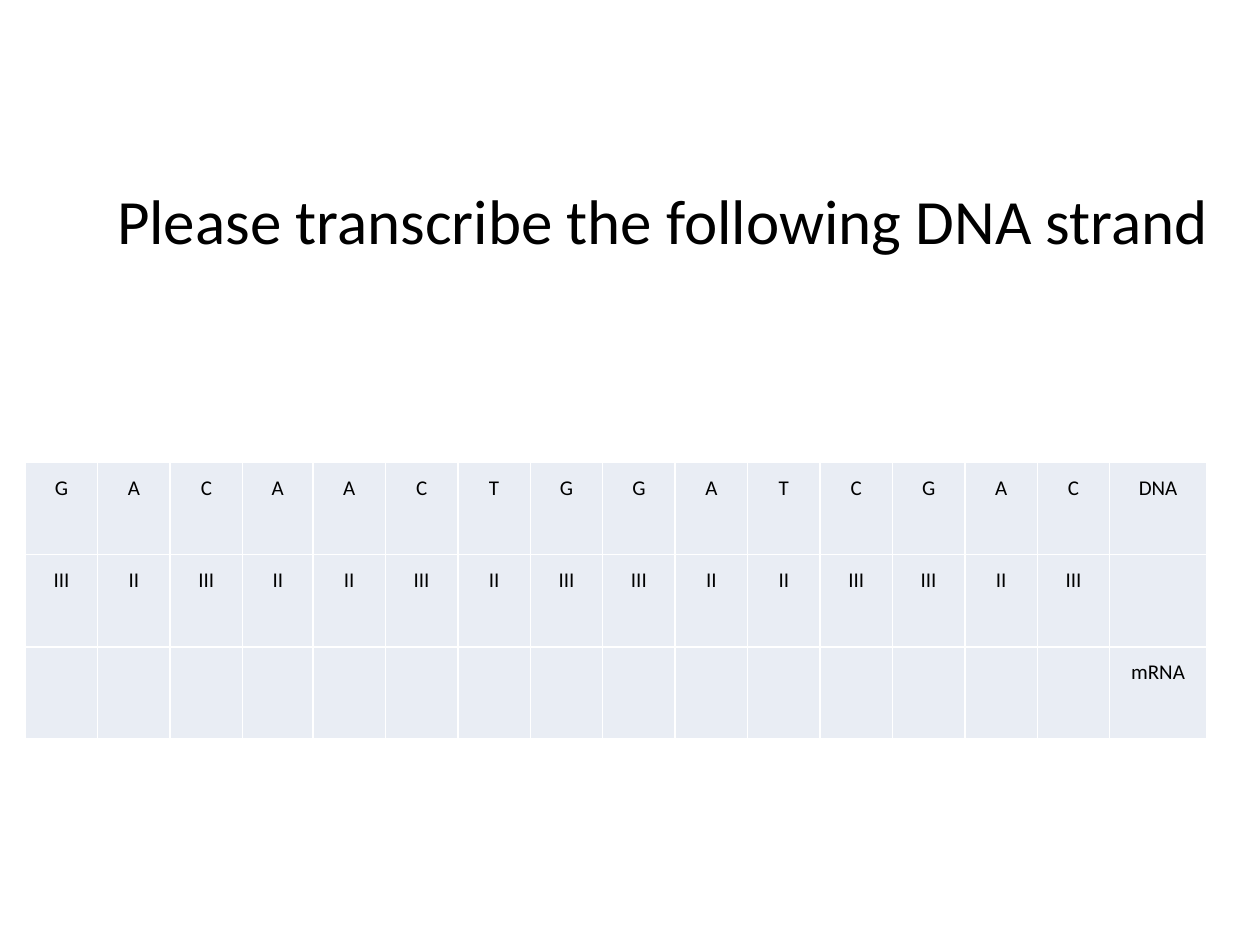
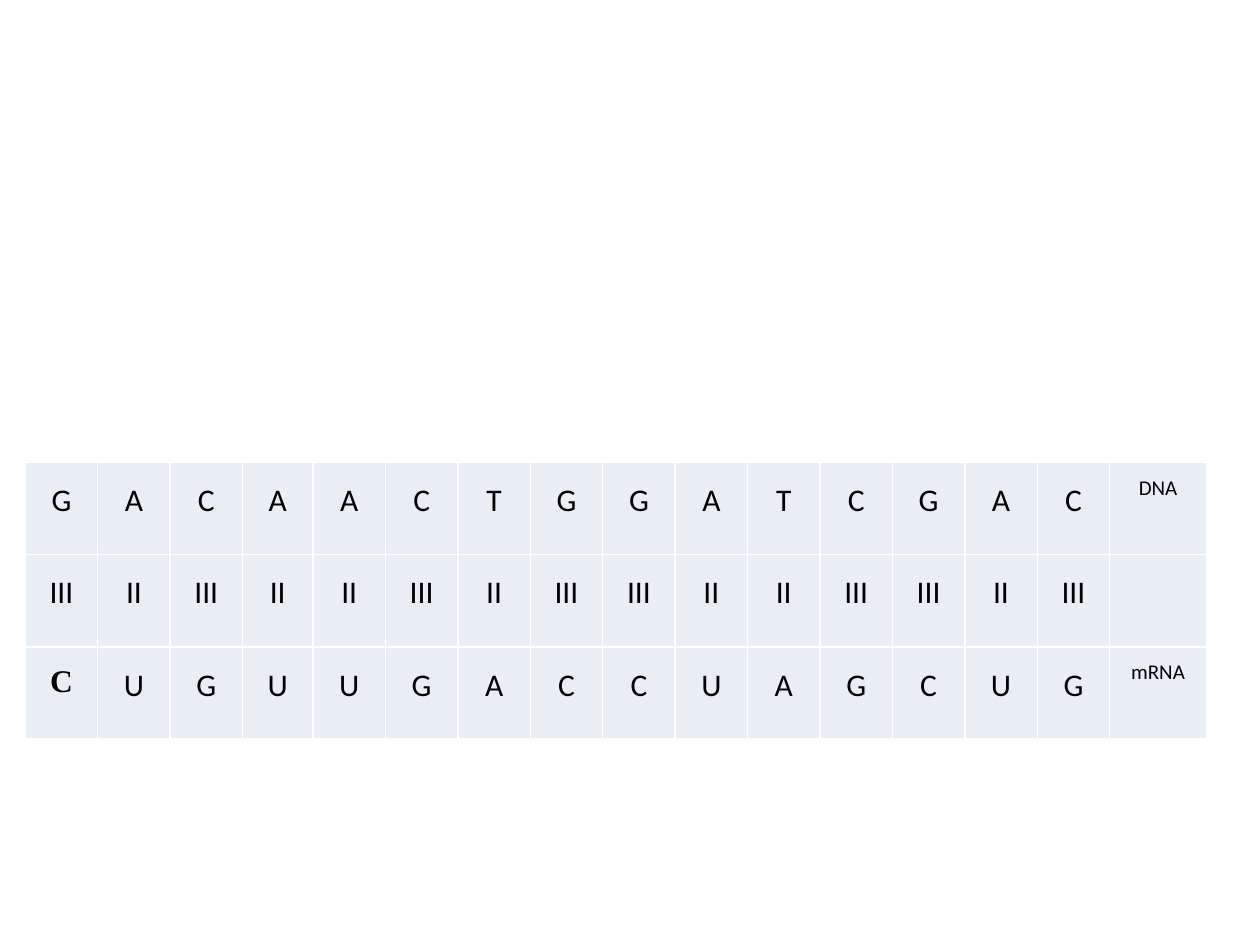
from lxml.etree import SubElement
from pptx import Presentation
from pptx.dml.color import RGBColor
from pptx.enum.text import MSO_AUTO_SIZE, PP_ALIGN
from pptx.oxml.ns import qn
from pptx.util import Cm, Pt

DNA = "GACAACTGGATCGAC"
MRNA_PAIRS = {"G": "C", "C": "G", "A": "U", "T": "A"}
BONDS = {"G": "III", "C": "III", "A": "II", "T": "II"}
COLUMN_WIDTHS = [1.46] * 3 + [1.42] + [1.46] * 11 + [1.95]
ROW_HEIGHT = 1.86


def color(hex_string):
    return RGBColor.from_string(hex_string)


class StrandDeck:
    font = "Calibri"
    text_color = "000000"
    cell_color = "E9EDF4"
    border_color = "FFFFFF"
    title_size = 36
    label_size = 12

    def __init__(self):
        self.presentation = Presentation()
        self.presentation.slide_width = Cm(25.4)
        self.presentation.slide_height = Cm(19.05)
        self.slide = None

    def add_slide(self):
        self.slide = self.presentation.slides.add_slide(self.presentation.slide_layouts[6])

    def format_runs(self, paragraph, size, font=None, bold=False):
        for run in paragraph.runs:
            run.font.name = font or self.font
            run.font.size = Pt(size)
            run.font.bold = bold
            run.font.color.rgb = color(self.text_color)

    def add_title(self, text):
        shape = self.slide.shapes.add_textbox(Cm(2.11), Cm(3.53), Cm(23.22), Cm(1.8))
        text_frame = shape.text_frame
        text_frame.word_wrap = False
        text_frame.auto_size = MSO_AUTO_SIZE.SHAPE_TO_FIT_TEXT
        text_frame.text = text
        self.format_runs(text_frame.paragraphs[0], self.title_size)

    def add_borders(self, cell):
        properties = cell._tc.get_or_add_tcPr()
        for side in ("a:lnL", "a:lnR", "a:lnT", "a:lnB"):
            line = SubElement(properties, qn(side), w=str(Pt(1)))
            fill = SubElement(line, qn("a:solidFill"))
            SubElement(fill, qn("a:srgbClr"), val=self.border_color)

    def fill_cell(self, cell, text, size):
        self.add_borders(cell)
        cell.fill.solid()
        cell.fill.fore_color.rgb = color(self.cell_color)
        cell.margin_left = cell.margin_right = Cm(0.18)
        cell.margin_top = cell.margin_bottom = 0
        paragraph = cell.text_frame.paragraphs[0]
        paragraph.text = text
        paragraph.alignment = PP_ALIGN.CENTER
        paragraph.line_spacing = 1.5
        indent = Cm(0.64)
        properties = paragraph._p.get_or_add_pPr()
        properties.set("marL", str(indent))
        properties.set("indent", str(-indent))
        self.format_runs(paragraph, size)

    def add_strand_table(self, mrna, base_size):
        rows = [
            [*DNA, "DNA"],
            [*(BONDS[base] for base in DNA), ""],
            [*mrna, "mRNA"],
        ]
        table = self.slide.shapes.add_table(
            len(rows), len(COLUMN_WIDTHS), Cm(0.51), Cm(9.32),
            Cm(sum(COLUMN_WIDTHS)), Cm(ROW_HEIGHT * len(rows)),
        ).table
        table.first_row = table.horz_banding = False
        for column, width in zip(table.columns, COLUMN_WIDTHS):
            column.width = Cm(width)
        for row_index, texts in enumerate(rows):
            table.rows[row_index].height = Cm(ROW_HEIGHT)
            for column_index, text in enumerate(texts):
                size = base_size if column_index < len(DNA) else self.label_size
                self.fill_cell(table.cell(row_index, column_index), text, size)
        return table


def main():
    deck = StrandDeck()

    deck.add_slide()
    deck.add_strand_table([""] * len(DNA), base_size=12)
    deck.add_title("Please transcribe the following DNA strand")

    deck.add_slide()
    answer_size = 18
    answer = deck.add_strand_table([MRNA_PAIRS[base] for base in DNA], answer_size)
    first_base = answer.cell(2, 0).text_frame.paragraphs[0]
    deck.format_runs(first_base, answer_size, font="Times New Roman", bold=True)

    deck.presentation.save("out.pptx")


if __name__ == "__main__":
    main()
